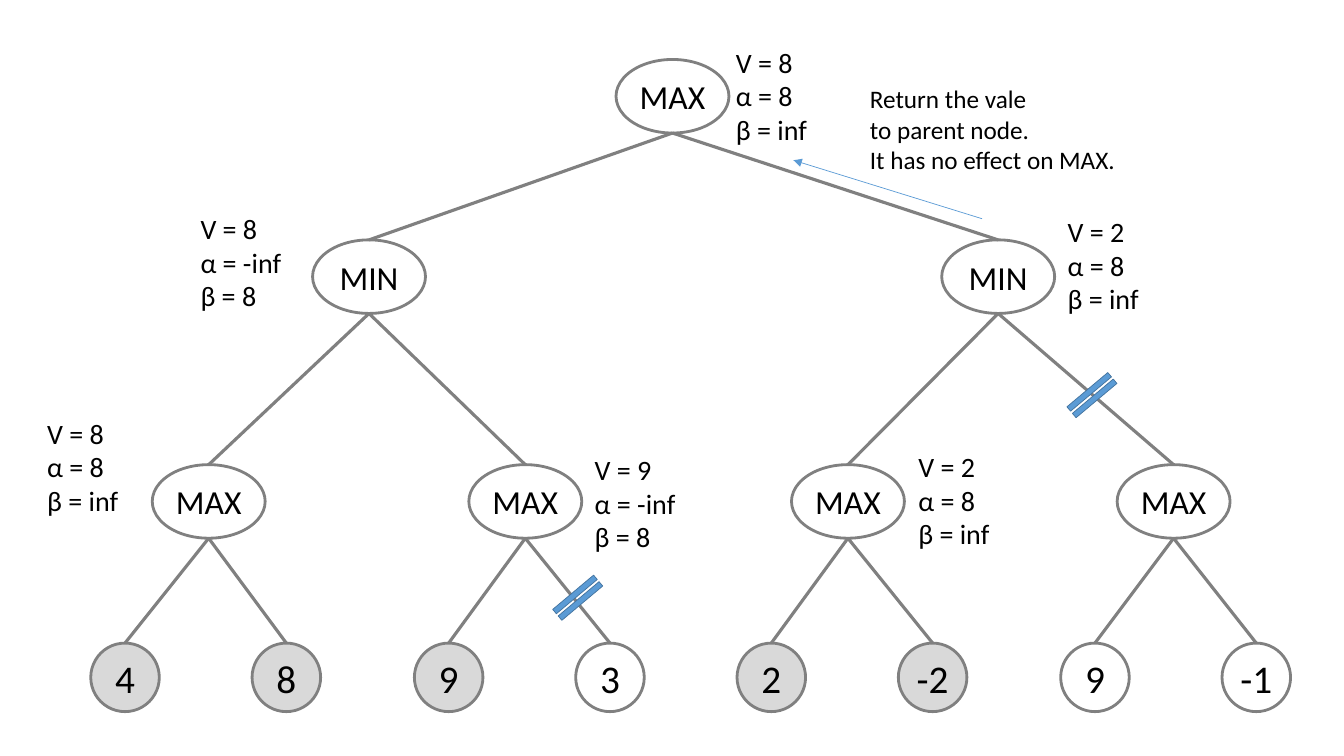
from lxml.etree import SubElement
from pptx import Presentation
from pptx.dml.color import RGBColor
from pptx.enum.shapes import MSO_CONNECTOR as Connector, MSO_SHAPE as Shape
from pptx.enum.text import MSO_ANCHOR as Anchor, PP_ALIGN as Align
from pptx.oxml.ns import qn
from pptx.util import Pt

PX = 9144  # 100 px to the inch
FONT = "Calibri"
GREY, BLUE, DARK_BLUE, VISITED, BLACK = "808080", "5B9BD5", "43739E", "D9D9D9", "000000"
NODE_W, NODE_H = 112, 73
LEAF_SIZE, LEAF_TOP, LEAF_LEFT, LEAF_SPAN = 68, 638, 90, 1122

# (name, left, top, parent index)
NODES = [
    ("MAX", 611, 59, None),
    ("MIN", 310, 238, 0), ("MIN", 934, 238, 0),
    ("MAX", 151, 461, 1), ("MAX", 465, 461, 1),
    ("MAX", 785, 461, 2), ("MAX", 1108, 461, 2),
]
FIRST_LEAF_PARENT = 3
LEAVES = [("4", True), ("8", True), ("9", True), ("3", False),
          ("2", True), ("-2", True), ("9", False), ("-1", False)]
# (left, top, width, V, α, β)
BOUNDS = [
    (720, 40, 93, "8", "8", "inf"),
    (189, 205, 101, "8", "-inf", "8"),
    (37, 408, 93, "8", "8", "inf"),
    (580, 444, 101, "9", "-inf", "8"),
    (1049, 208, 93, "2", "8", "inf"),
    (901, 441, 93, "2", "8", "inf"),
]
CUTS = [(537, 581), (1047, 380)]


def px(*lengths):
    return [round(length * PX) for length in lengths]


def color(hex_string):
    return RGBColor.from_string(hex_string)


def write(shape, text, size, align=Align.LEFT, anchor=Anchor.TOP, inset=(10, 5)):
    frame = shape.text_frame
    frame.word_wrap = False
    frame.vertical_anchor = anchor
    frame.margin_left = frame.margin_right = px(inset[0])[0]
    frame.margin_top = frame.margin_bottom = px(inset[1])[0]
    for index, line in enumerate(text.split("\n")):
        para = frame.paragraphs[0] if index == 0 else frame.add_paragraph()
        para.alignment = align
        span = para.add_run()
        span.text = line
        span.font.name, span.font.size = FONT, Pt(size)
        span.font.color.rgb = color(BLACK)


def add_label(page, box, text, size):
    write(page.shapes.add_textbox(*px(*box)), text, size)


def add_figure(page, kind, box, fill, line, width):
    figure = page.shapes.add_shape(kind, *px(*box))
    figure.shadow.inherit = False
    if fill:
        figure.fill.solid()
        figure.fill.fore_color.rgb = color(fill)
    else:
        figure.fill.background()
    figure.line.color.rgb = color(line)
    figure.line.width = Pt(width)
    return figure


def add_node(page, box, text, size, fill=None):
    node = add_figure(page, Shape.OVAL, box, fill, GREY, 2)
    write(node, text, size, Align.CENTER, Anchor.MIDDLE, inset=(0, 0))
    return node


def add_line(page, ends, line, width):
    link = page.shapes.add_connector(Connector.STRAIGHT, *ends)
    link.line.color.rgb = color(line)
    link.line.width = Pt(width)
    SubElement(link._element.spPr, qn("a:effectLst"))
    return link


def add_branch(page, parent, child):
    """Join the bottom of the parent to the top of the child."""
    ends = (parent.left + parent.width // 2, parent.top + parent.height,
            child.left + child.width // 2, child.top)
    add_line(page, ends, GREY, 2.25).end_connect(child, 0)


def add_tree(page):
    nodes, branches = [], []
    for name, left, top, parent in NODES:
        node = add_node(page, (left, top, NODE_W, NODE_H), name, 24)
        nodes.append(node)
        if parent is not None:
            branches.append((nodes[parent], node))
    for index, (value, visited) in enumerate(LEAVES):
        left = LEAF_LEFT + round(index * LEAF_SPAN / (len(LEAVES) - 1))
        leaf = add_node(page, (left, LEAF_TOP, LEAF_SIZE, LEAF_SIZE), value, 28,
                        VISITED if visited else None)
        branches.append((nodes[FIRST_LEAF_PARENT + index // 2], leaf))
    for parent, child in branches:
        add_branch(page, parent, child)


def add_bounds(page):
    for left, top, width, value, alpha, beta in BOUNDS:
        add_label(page, (left, top, width, 111),
                  f"V = {value}\nα = {alpha}\nβ = {beta}", 20)


def add_cuts(page):
    """Mark the pruned branches."""
    for left, top in CUTS:
        cut = add_figure(page, Shape.MATH_EQUAL, (left, top, 72, 24), BLUE, DARK_BLUE, 0.5)
        cut.rotation = 320


def add_return_note(page):
    add_label(page, (853, 78, 267, 101),
              "Return the vale\nto parent node.\nIt has no effect on MAX.", 18)
    arrow = add_line(page, px(974, 217, 787, 159), BLUE, 0.5)
    SubElement(arrow.line._get_or_add_ln(), qn("a:tailEnd"), type="triangle")


def main():
    deck = Presentation()
    deck.slide_width, deck.slide_height = px(1333, 750)
    page = deck.slides.add_slide(deck.slide_layouts[6])
    add_tree(page)
    add_bounds(page)
    add_cuts(page)
    add_return_note(page)
    deck.save("out.pptx")


if __name__ == "__main__":
    main()
